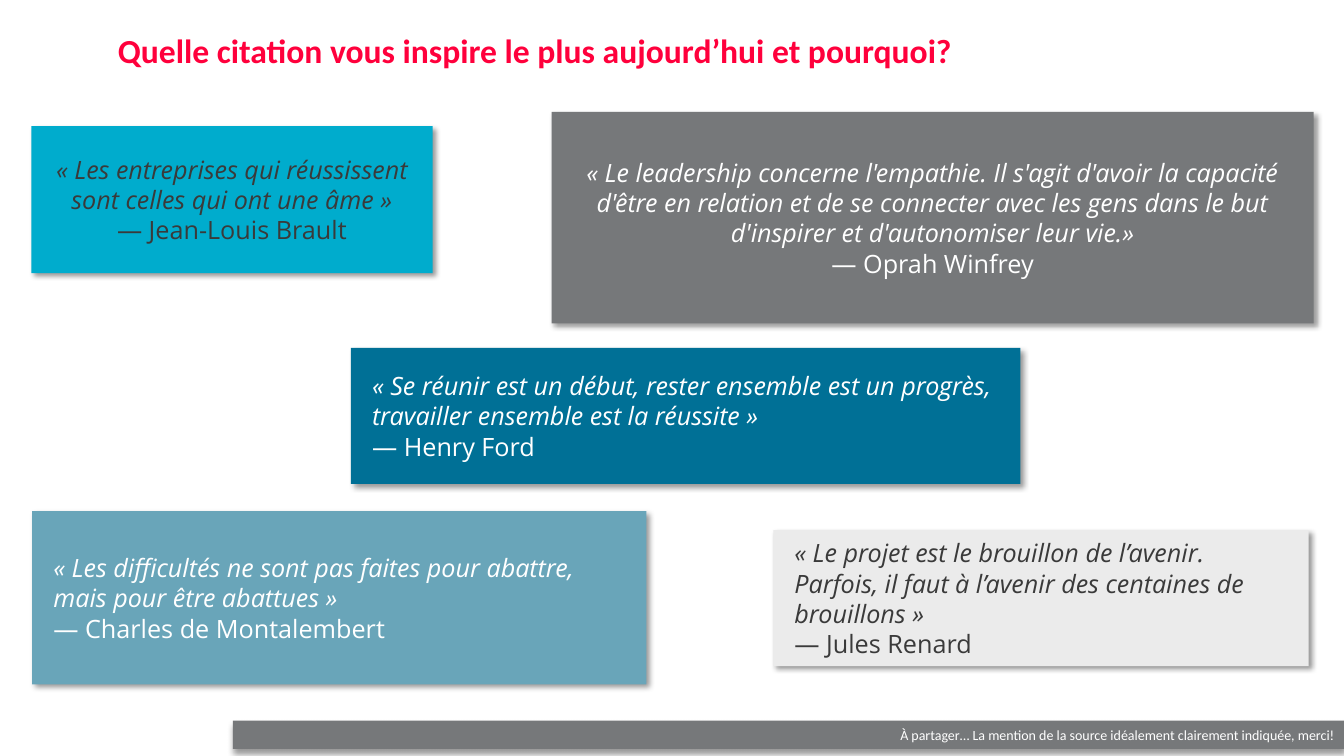
"""Build a slide of five inspiring quotations under a title question."""
import pptx
import pptx.util
import pptx.dml.color
import pptx.enum.shapes
import pptx.enum.text
import pptx.oxml
import pptx.oxml.ns

WIDTH, HEIGHT = 13.33, 7.5
INSET = 0.21
ALIGN = pptx.enum.text.PP_ALIGN
ANCHOR = pptx.enum.text.MSO_ANCHOR

TITLE = {
    "text": "Quelle citation vous inspire le plus aujourd’hui et pourquoi?",
    "area": (8.03, 0.8, 72.24, 9.2),
    "font": {"name": "Calibri", "size": 24, "bold": True, "color": "FF003C"},
}
FOOTER = {
    "text": "À partager… La mention de la source idéalement clairement indiquée, merci!",
    "area": (17.33, 95.33, 82.67, 3.73),
    "font": {"name": "Calibri", "size": 10, "color": "FFFFFF"},
    "fill": "76787A",
}
QUOTES = [
    ("« Les entreprises qui réussissent sont celles qui ont une âme »",
     "Jean-Louis Brault", (2.33, 16.67, 29.86, 19.47), "00ACCD", "3A3A3A", ALIGN.CENTER),
    ("« Le leadership concerne l'empathie. Il s'agit d'avoir la capacité d'être en relation "
     "et de se connecter avec les gens dans le but d'inspirer et d'autonomiser leur vie.»",
     "Oprah Winfrey", (41.04, 14.8, 56.71, 28), "76787A", "FFFFFF", ALIGN.CENTER),
    ("« Se réunir est un début, rester ensemble est un progrès, "
     "travailler ensemble est la réussite »",
     "Henry Ford", (26.11, 46, 49.81, 18), "007096", "FFFFFF", ALIGN.LEFT),
    ("« Les difficultés ne sont pas faites pour abattre, mais pour être abattues »",
     "Charles de Montalembert", (2.4, 67.6, 45.69, 22.93), "69A5B9", "FFFFFF", ALIGN.LEFT),
    ("« Le projet est le brouillon de l’avenir. Parfois, il faut à l’avenir "
     "des centaines de brouillons »",
     "Jules Renard", (57.54, 70.13, 39.83, 18), "EBEBEB", "3A3A3A", ALIGN.LEFT),
]


def rgb(value):
    """Turn a hex string into a colour."""
    return pptx.dml.color.RGBColor.from_string(value)


def place(area):
    """Turn percentages of the slide into lengths."""
    sides = (WIDTH, HEIGHT, WIDTH, HEIGHT)
    return [pptx.util.Inches(share * side / 100) for share, side in zip(area, sides)]


def add_span(para, text, color, size, **font):
    """Add one formatted run."""
    span = para.add_run()
    span.text = text
    span.font.color.rgb = rgb(color)
    span.font.size = pptx.util.Pt(size)
    for key, value in font.items():
        setattr(span.font, key, value)


def set_frame(box, anchor, align, **margins):
    """Set up a wrapping text frame and return its first paragraph."""
    frame = box.text_frame
    for key, value in {"word_wrap": True, "vertical_anchor": anchor, **margins}.items():
        setattr(frame, key, value)
    para = frame.paragraphs[0]
    para.alignment = align
    return para


def add_panel(page, area, fill, angle):
    """Add a borderless rectangle with a soft shadow."""
    box = page.shapes.add_shape(pptx.enum.shapes.MSO_SHAPE.RECTANGLE, *place(area))
    box.fill.solid()
    box.fill.fore_color.rgb = rgb(fill)
    box.line.fill.background()
    box.shadow.inherit = False
    effects = box._element.spPr.find(pptx.oxml.ns.qn("a:effectLst"))
    effects.append(pptx.oxml.parse_xml(
        f'<a:outerShdw {pptx.oxml.ns.nsdecls("a")} blurRad="{pptx.util.Pt(4)}" '
        f'dist="{pptx.util.Pt(3)}" dir="{angle * 60000}" algn="tl" rotWithShape="0">'
        '<a:srgbClr val="000000"><a:alpha val="40000"/></a:srgbClr></a:outerShdw>'))
    return box


def main():
    """Draw the slide and save it."""
    deck = pptx.Presentation()
    deck.slide_width = pptx.util.Inches(WIDTH)
    deck.slide_height = pptx.util.Inches(HEIGHT)
    page = deck.slides.add_slide(deck.slide_layouts[6])

    footer = add_panel(page, FOOTER["area"], FOOTER["fill"], 90)
    para = set_frame(footer, ANCHOR.MIDDLE, ALIGN.RIGHT)
    add_span(para, FOOTER["text"], **FOOTER["font"])

    title = page.shapes.add_textbox(*place(TITLE["area"]))
    para = set_frame(title, ANCHOR.BOTTOM, ALIGN.LEFT)
    para.line_spacing = 0.9
    add_span(para, TITLE["text"], **TITLE["font"])

    margins = {f"margin_{side}": pptx.util.Inches(INSET)
               for side in ("left", "top", "right", "bottom")}
    for quote, author, area, fill, color, align in QUOTES:
        box = add_panel(page, area, fill, 45)
        para = set_frame(box, ANCHOR.MIDDLE, align, **margins)
        add_span(para, quote, color, 18, name="Open Sans", italic=True)
        para.add_line_break()
        add_span(para, f"— {author}", color, 18, name="Open Sans", italic=False)

    deck.save("out.pptx")


if __name__ == "__main__":
    main()
